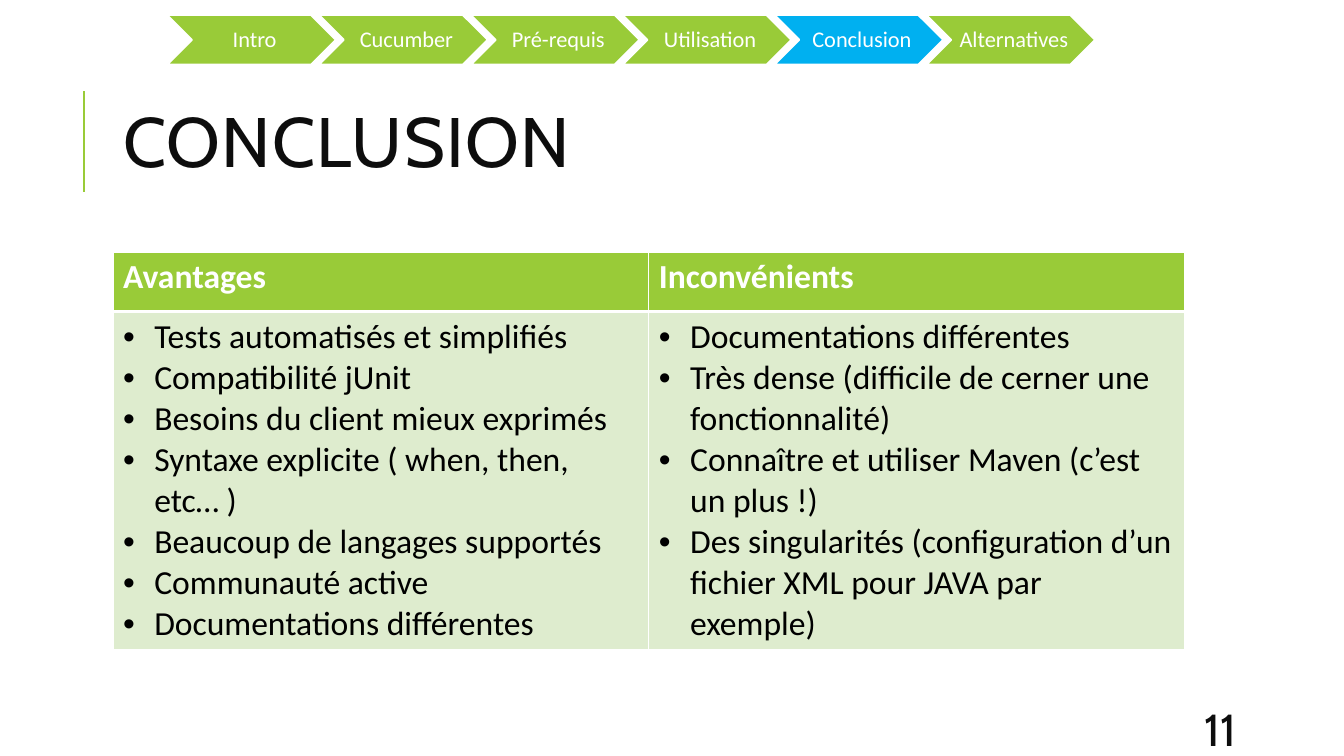
import pptx
import pptx.dml.color
import pptx.enum.shapes
import pptx.enum.text
import pptx.oxml
import pptx.oxml.ns
import pptx.util
from lxml import etree

Inches = pptx.util.Inches
Pt = pptx.util.Pt
ALIGN = pptx.enum.text.PP_ALIGN
ANCHOR = pptx.enum.text.MSO_ANCHOR

STEPS = ["Intro", "Cucumber", "Pré-requis", "Utilisation", "Conclusion", "Alternatives"]
COLUMNS = {
    "Avantages": [
        "Tests automatisés et simplifiés",
        "Compatibilité jUnit",
        "Besoins du client mieux exprimés",
        "Syntaxe explicite ( when, then, etc… )",
        "Beaucoup de langages supportés",
        "Communauté active",
        "Documentations différentes",
    ],
    "Inconvénients": [
        "Documentations différentes",
        "Très dense (difficile de cerner une fonctionnalité)",
        "Connaître et utiliser Maven (c’est un plus !)",
        "Des singularités (configuration d’un fichier XML pour JAVA par exemple)",
    ],
}


def color(value):
    return pptx.dml.color.RGBColor.from_string(value)


def add_element(parent, tag, **attributes):
    return etree.SubElement(parent, pptx.oxml.ns.qn(tag), attributes)


class SlideBuilder:
    GREEN = "99CB38"
    PALE_GREEN = "DEECCE"
    BLUE = "00B0F0"
    WHITE = "FFFFFF"
    BLACK = "000000"
    INK = "0D0D0D"
    HEADING_FONT = "Cabin"
    BODY_FONT = "Calibri"

    def __init__(self, presentation):
        self.slide = presentation.slides.add_slide(presentation.slide_layouts[5])

    def run(self, paragraph, text, font, size, text_color, bold=False):
        run = paragraph.add_run()
        run.text = text
        run.font.name = font
        run.font.size = Pt(size)
        run.font.bold = bold
        run.font.color.rgb = color(text_color)
        return run

    def title(self, text, left, top, width, height):
        shape = self.slide.shapes.title
        shape.left, shape.top = Inches(left), Inches(top)
        shape.width, shape.height = Inches(width), Inches(height)
        frame = shape.text_frame
        frame.auto_size = pptx.enum.text.MSO_AUTO_SIZE.NONE
        frame.vertical_anchor = ANCHOR.MIDDLE
        paragraph = frame.paragraphs[0]
        paragraph.alignment = ALIGN.LEFT
        paragraph.line_spacing = 0.8
        run = self.run(paragraph, text, self.HEADING_FONT, 50, self.INK)
        run.font._element.set("spc", "100")

    def line(self, x1, y1, x2, y2, line_color, width):
        connector = self.slide.shapes.add_connector(
            pptx.enum.shapes.MSO_CONNECTOR.STRAIGHT,
            Inches(x1), Inches(y1), Inches(x2), Inches(y2))
        connector.line.color.rgb = color(line_color)
        connector.line.width = Pt(width)
        add_element(connector._element.spPr, "a:effectLst")

    def chevron(self, left, top, width, height, fill):
        shape = self.slide.shapes.add_shape(
            pptx.enum.shapes.MSO_SHAPE.CHEVRON,
            Inches(left), Inches(top), Inches(width), Inches(height))
        shape.shadow.inherit = False
        shape.fill.solid()
        shape.fill.fore_color.rgb = color(fill)
        shape.line.color.rgb = color(self.WHITE)
        shape.line.width = Pt(1.25)

    def text_box(self, left, top, width, height):
        shape = self.slide.shapes.add_textbox(
            Inches(left), Inches(top), Inches(width), Inches(height))
        frame = shape.text_frame
        frame.word_wrap = True
        frame.vertical_anchor = ANCHOR.MIDDLE
        return frame

    def step_label(self, text, left, top, width, height):
        frame = self.text_box(left, top, width, height)
        frame.margin_left = Inches(0.07)
        frame.margin_top = frame.margin_right = frame.margin_bottom = Inches(0.02)
        paragraph = frame.paragraphs[0]
        paragraph.alignment = ALIGN.CENTER
        paragraph.line_spacing = 0.9
        self.run(paragraph, text, self.BODY_FONT, 16, self.WHITE)

    def page_number(self, text, left, top, width, height):
        frame = self.text_box(left, top, width, height)
        self.run(frame.paragraphs[0], text, self.HEADING_FONT, 32, self.INK)

    def bullet(self, paragraph):
        properties = paragraph._p.get_or_add_pPr()
        properties.set("marL", str(Inches(0.31)))
        properties.set("indent", str(-Inches(0.31)))
        add_element(properties, "a:buFont", typeface="Arial")
        add_element(properties, "a:buChar", char="•")

    def cell_style(self, cell, fill, top_border, bottom_border):
        properties = cell._tc.get_or_add_tcPr()
        borders = {"a:lnL": 1, "a:lnR": 1, "a:lnT": top_border, "a:lnB": bottom_border}
        for tag, width in borders.items():
            border = add_element(properties, tag, w=str(Pt(width)))
            solid = add_element(border, "a:solidFill")
            add_element(solid, "a:srgbClr", val=self.WHITE)
        cell.fill.solid()
        cell.fill.fore_color.rgb = color(fill)

    def table(self, columns, left, top, width, row_heights):
        table = self.slide.shapes.add_table(
            len(row_heights), len(columns), Inches(left), Inches(top),
            Inches(width), Inches(sum(row_heights))).table
        for row, height in zip(table.rows, row_heights):
            row.height = Inches(height)
        for index, (heading, items) in enumerate(columns.items()):
            header, body = table.cell(0, index), table.cell(1, index)
            self.cell_style(header, self.GREEN, 1, 3)
            self.cell_style(body, self.PALE_GREEN, 3, 1)
            self.run(header.text_frame.paragraphs[0], heading,
                     self.BODY_FONT, 24, self.WHITE, bold=True)
            frame = body.text_frame
            for number, item in enumerate(items):
                paragraph = frame.add_paragraph() if number else frame.paragraphs[0]
                self.bullet(paragraph)
                self.run(paragraph, item, self.BODY_FONT, 24, self.BLACK)


def main():
    presentation = pptx.Presentation()
    presentation.slide_width = Inches(13.33)
    presentation.slide_height = Inches(7.5)
    builder = SlideBuilder(presentation)

    # Title and its accent line
    builder.line(0.83, 1.9, 0.83, 0.9, builder.GREEN, 1.5)
    builder.title("CONCLUSION", 1.12, 0.64, 10.63, 1.64)

    # Pros and cons
    builder.table(COLUMNS, 1.12, 2.5, 10.63, [0.59, 3.35])

    # Progress bar, current step in blue
    for index, step in enumerate(STEPS):
        left = 1.66 + index * 1.506
        fill = builder.BLUE if step == "Conclusion" else builder.GREEN
        builder.chevron(left, 0.15, 1.67, 0.49, fill)
        builder.step_label(step, left + 0.25, 0.15, 1.18, 0.49)

    # Page number
    builder.page_number("11", 11.85, 7.08, 1.06, 0.3)

    presentation.save("out.pptx")


if __name__ == "__main__":
    main()
